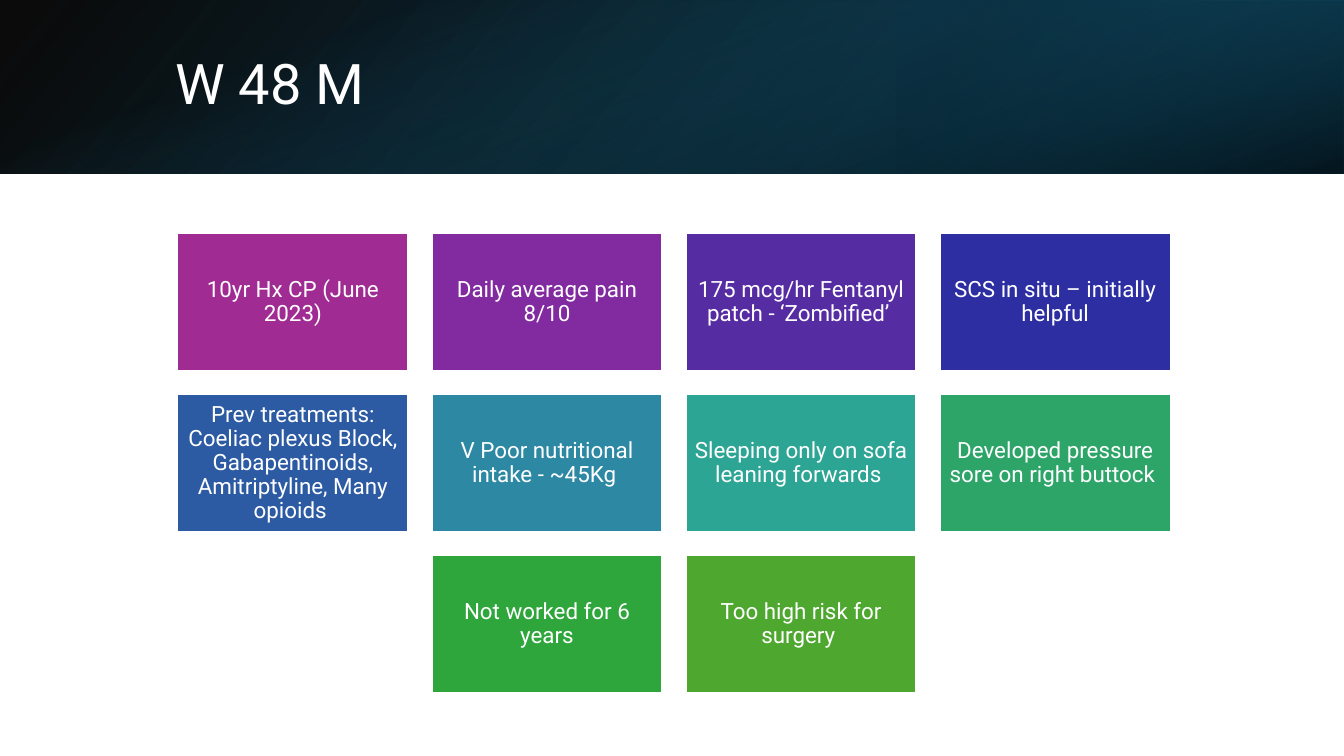
from lxml.etree import SubElement
from pptx import Presentation
from pptx.dml.color import RGBColor
from pptx.enum.shapes import MSO_SHAPE
from pptx.enum.text import MSO_ANCHOR, MSO_AUTO_SIZE, PP_ALIGN
from pptx.oxml.ns import qn
from pptx.util import Inches, Pt

FONT = "Roboto"
COLORS = {
    "white": "FFFFFF", "black": "000000", "petrol": "104862",
    "teal": "156082", "deep_teal": "0B3041",
    "magenta": "A02B93", "purple": "822BA1", "violet": "562CA2",
    "indigo": "2C2EA2", "blue": "2C5BA3", "cyan": "2D88A4",
    "turquoise": "2DA594", "sea_green": "2DA568", "green": "2EA63B",
    "lime": "4EA72E",
}

# Case history, one list per row of cards
CARD_ROWS = [
    [("10yr Hx CP (June 2023)", "magenta"),
     ("Daily average pain 8/10", "purple"),
     ("175 mcg/hr Fentanyl patch - ‘Zombified’ ", "violet"),
     ("SCS in situ – initially helpful", "indigo")],
    [("Prev treatments: Coeliac plexus Block, Gabapentinoids, "
      "Amitriptyline, Many opioids ", "blue"),
     ("V Poor nutritional intake - ~45Kg ", "cyan"),
     ("Sleeping only on sofa leaning forwards ", "turquoise"),
     ("Developed pressure sore on right buttock ", "sea_green")],
    [("Not worked for 6 years", "green"),
     ("Too high risk for surgery ", "lime")],
]
COLUMNS = 4
GRID_LEFT, GRID_TOP = 1.76, 2.31
CARD_WIDTH, CARD_HEIGHT, GAP = 2.29, 1.37, 0.23


def rgb(name):
    return RGBColor.from_string(COLORS[name])


def add_rectangle(slide, left, top, width, height):
    rectangle = slide.shapes.add_shape(
        MSO_SHAPE.RECTANGLE, Inches(left), Inches(top), Inches(width), Inches(height))
    rectangle.shadow.inherit = False
    return rectangle


def format_text(frame, size, alignment):
    frame.word_wrap = True
    frame.auto_size = MSO_AUTO_SIZE.NONE
    frame.vertical_anchor = MSO_ANCHOR.MIDDLE
    paragraph = frame.paragraphs[0]
    paragraph.alignment = alignment
    paragraph.line_spacing = 0.9
    font = paragraph.runs[0].font
    font.name, font.size = FONT, Pt(size)
    font.color.rgb = rgb("white")


def add_banner_layer(slide, box, stops, angle, rotation=0, flipped=False):
    """Stops are (position %, colour, opacity %); angle runs clockwise."""
    layer = add_rectangle(slide, *box)
    layer.line.fill.background()
    layer.rotation = rotation
    properties = layer._element.spPr
    if flipped:
        properties.find(qn("a:xfrm")).set("flipH", "1")
    gradient = SubElement(properties, qn("a:gradFill"), rotWithShape="1")
    properties.find(qn("a:prstGeom")).addnext(gradient)
    stop_list = SubElement(gradient, qn("a:gsLst"))
    for position, color, opacity in stops:
        stop = SubElement(stop_list, qn("a:gs"), pos=str(position * 1000))
        fill = SubElement(stop, qn("a:srgbClr"), val=COLORS[color])
        SubElement(fill, qn("a:alpha"), val=str(opacity * 1000))
    SubElement(gradient, qn("a:lin"), ang=str(angle * 60000), scaled="0")


def set_title(slide, text):
    title = slide.shapes.title
    title.left, title.top = Inches(1.5), Inches(0.38)
    title.width, title.height = Inches(10.98), Inches(0.96)
    title.text_frame.text = text
    format_text(title.text_frame, 40, PP_ALIGN.LEFT)
    # Bring the title in front of the banner
    slide.shapes._spTree.append(title._element)


def add_card(slide, left, top, text, color):
    card = add_rectangle(slide, left, top, CARD_WIDTH, CARD_HEIGHT)
    card.fill.solid()
    card.fill.fore_color.rgb = rgb(color)
    card.line.color.rgb = rgb("white")
    card.line.width = Pt(1.5)
    frame = card.text_frame
    frame.margin_left = frame.margin_right = Inches(0.07)
    frame.margin_top = frame.margin_bottom = Inches(0.07)
    frame.text = text
    format_text(frame, 16, PP_ALIGN.CENTER)


def add_cards(slide):
    for row, cards in enumerate(CARD_ROWS):
        # A short row is centred under the full ones
        indent = (COLUMNS - len(cards)) / 2
        top = GRID_TOP + row * (CARD_HEIGHT + GAP)
        for column, (text, color) in enumerate(cards):
            left = GRID_LEFT + (indent + column) * (CARD_WIDTH + GAP)
            add_card(slide, left, top, text, color)


def main():
    deck = Presentation()
    deck.slide_width, deck.slide_height = Inches(13.33), Inches(7.5)
    slide = deck.slides.add_slide(deck.slide_layouts[5])

    # Banner
    add_banner_layer(slide, (0, 0, 13.33, 1.72),
                     [(0, "black", 96), (100, "petrol", 100)], 140, flipped=True)
    add_banner_layer(slide, (8.89, 0, 4.44, 1.72),
                     [(19, "deep_teal", 68), (100, "teal", 79)], 320,
                     rotation=180, flipped=True)
    add_banner_layer(slide, (5.8, -5.8, 1.72, 13.33),
                     [(23, "teal", 0), (99, "black", 74)], 340, rotation=90)
    set_title(slide, " W 48 M")

    # Case history
    add_cards(slide)
    deck.save("out.pptx")


if __name__ == "__main__":
    main()
